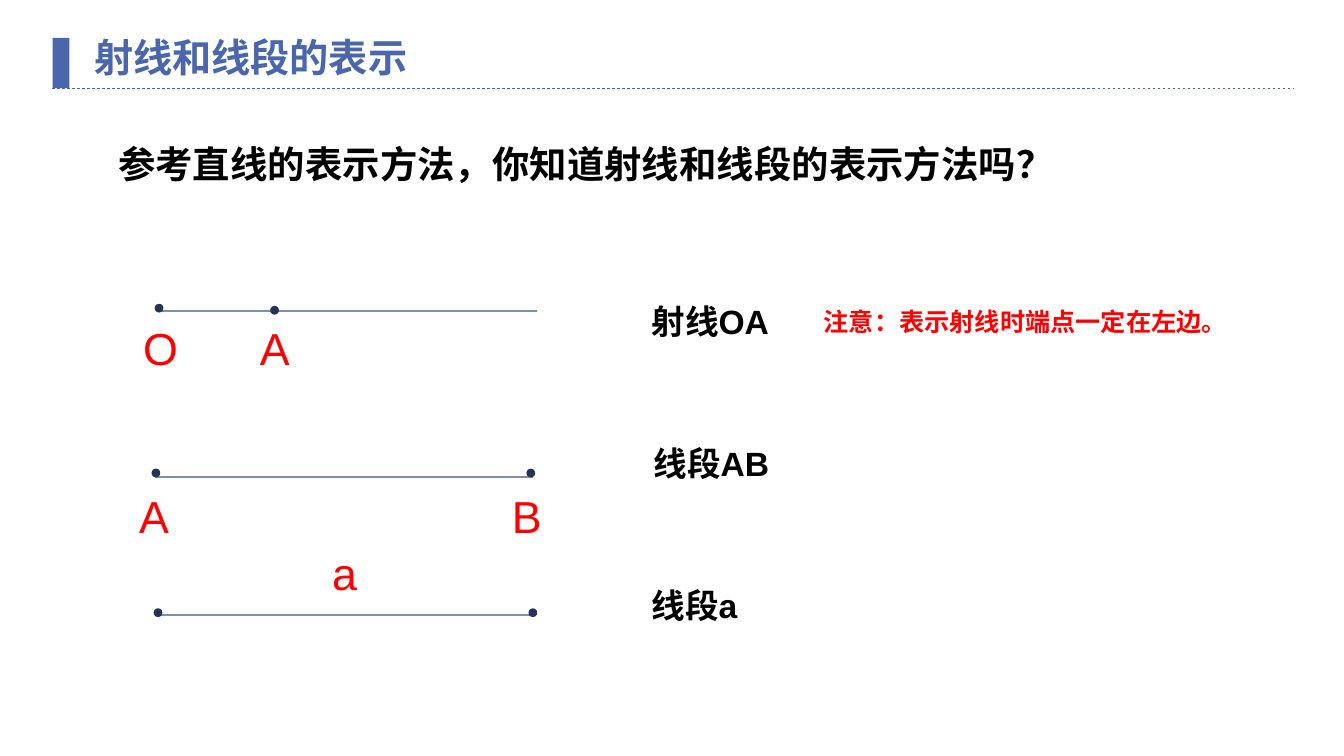
from dataclasses import dataclass

from lxml import etree
from pptx import Presentation
from pptx.dml.color import RGBColor
from pptx.enum.dml import MSO_LINE
from pptx.enum.shapes import MSO_CONNECTOR, MSO_SHAPE
from pptx.enum.text import MSO_ANCHOR, MSO_AUTO_SIZE, PP_ALIGN
from pptx.oxml.ns import qn
from pptx.util import Emu, Pt

STRAIGHT = MSO_CONNECTOR.STRAIGHT
RECT, OVAL = MSO_SHAPE.RECTANGLE, MSO_SHAPE.OVAL
DASH = MSO_LINE.DASH
MIDDLE = MSO_ANCHOR.MIDDLE
GROW, FIXED = MSO_AUTO_SIZE.SHAPE_TO_FIT_TEXT, MSO_AUTO_SIZE.NONE
LEFT = PP_ALIGN.LEFT
TITLE_ONLY = 5
DOT = 7


@dataclass(frozen=True)
class Theme:
    font: str = "Arial"
    accent: str = "4A66AC"
    stroke: str = "7F8FA9"
    dot: str = "253356"
    ink: str = "000000"
    mark: str = "FF0000"
    title: float = 28
    question: float = 26.7
    label: float = 32
    answer: float = 24
    note: float = 18


THEME = Theme()


def px(n):
    return Emu(n * 9525)


def rgb(color):
    return RGBColor.from_string(color)


def write(sp, text, size, color, bold=True):
    tf = sp.text_frame
    tf.text = text
    tf.word_wrap = True
    p = tf.paragraphs[0]
    p.alignment = LEFT
    font = p.runs[0].font
    font.name, font.size, font.bold = THEME.font, Pt(size), bold
    font.color.rgb = rgb(color)
    return tf


def add_text(s, box, text, size, color, bold=True):
    tf = write(s.shapes.add_textbox(*map(px, box)), text, size, color, bold)
    tf.auto_size = GROW
    return tf


def add_line(s, x, y, w, color, weight):
    line = s.shapes.add_connector(STRAIGHT, px(x), px(y), px(x + w), px(y))
    line.line.color.rgb = rgb(color)
    line.line.width = Pt(weight)
    etree.SubElement(line._element.spPr, qn("a:effectLst"))
    return line


def add_solid(s, kind, box, color):
    sp = s.shapes.add_shape(kind, *map(px, box))
    sp.shadow.inherit = False
    sp.fill.solid()
    sp.fill.fore_color.rgb = rgb(color)
    sp.line.fill.background()
    return sp


def header(s, x, y, w, h, text):
    # Dashed rule, marker bar and title
    add_line(s, x, y + h, w, THEME.accent, 0.5).line.dash_style = DASH
    add_solid(s, RECT, (x, y, 16, h), THEME.accent)
    title = s.shapes.title
    title.left, title.top, title.width, title.height = map(
        px, (x + 30, y - 9, 840, 55))
    tf = write(title, text, THEME.title, THEME.accent)
    tf.auto_size = FIXED
    tf.vertical_anchor = MIDDLE


def question(s, box, text):
    tf = add_text(s, box, text, THEME.question, THEME.ink)
    tf.paragraphs[0].line_spacing = 1.5


def figure(s, x, y, w, dots, labels):
    # Line with its points, then the red letters; offsets from the line's start
    add_line(s, x, y, w, THEME.stroke, 1.5)
    for dx, dy in dots:
        dot = add_solid(s, OVAL, (x + dx, y + dy, DOT, DOT), THEME.dot)
        dot.line.color.rgb = rgb(THEME.dot)
        dot.line.width = Pt(1)
    for letter, dx, dy in labels:
        add_text(s, (x + dx, y + dy, 48, 61), letter,
                 THEME.label, THEME.mark, bold=False)


def answer(s, x, y, text):
    add_text(s, (x, y, 140, 48), text, THEME.answer, THEME.ink)


# Line start and length, points, letters, answer position and wording
FIGURES = [
    ((152, 296, 359), [(-4, -6), (106, -4)], [("O", -25, 5), ("A", 86, 5)],
     (611, 282, "射线OA")),
    ((148, 454, 360), [(-3, -7), (354, -7)], [("A", -25, 7), ("B", 330, 7)],
     (613, 417, "线段AB")),
    ((151, 586, 359), [(-4, -6), (353, -6)], [("a", 156, -71)],
     (611, 552, "线段a")),
]


def main():
    prs = Presentation()
    prs.slide_width, prs.slide_height = px(1280), px(720)
    s = prs.slides.add_slide(prs.slide_layouts[TITLE_ONLY])
    header(s, 50, 36, 1181, 48, "射线和线段的表示")
    question(s, (103, 108, 1040, 67),
             "参考直线的表示方法，你知道射线和线段的表示方法吗？")
    for line, dots, labels, reply in FIGURES:
        figure(s, *line, dots, labels)
        answer(s, *reply)
    # Reminder beside the ray
    add_text(s, (775, 287, 412, 38), "注意：表示射线时端点一定在左边。",
             THEME.note, THEME.mark)
    prs.save("out.pptx")


if __name__ == "__main__":
    main()
